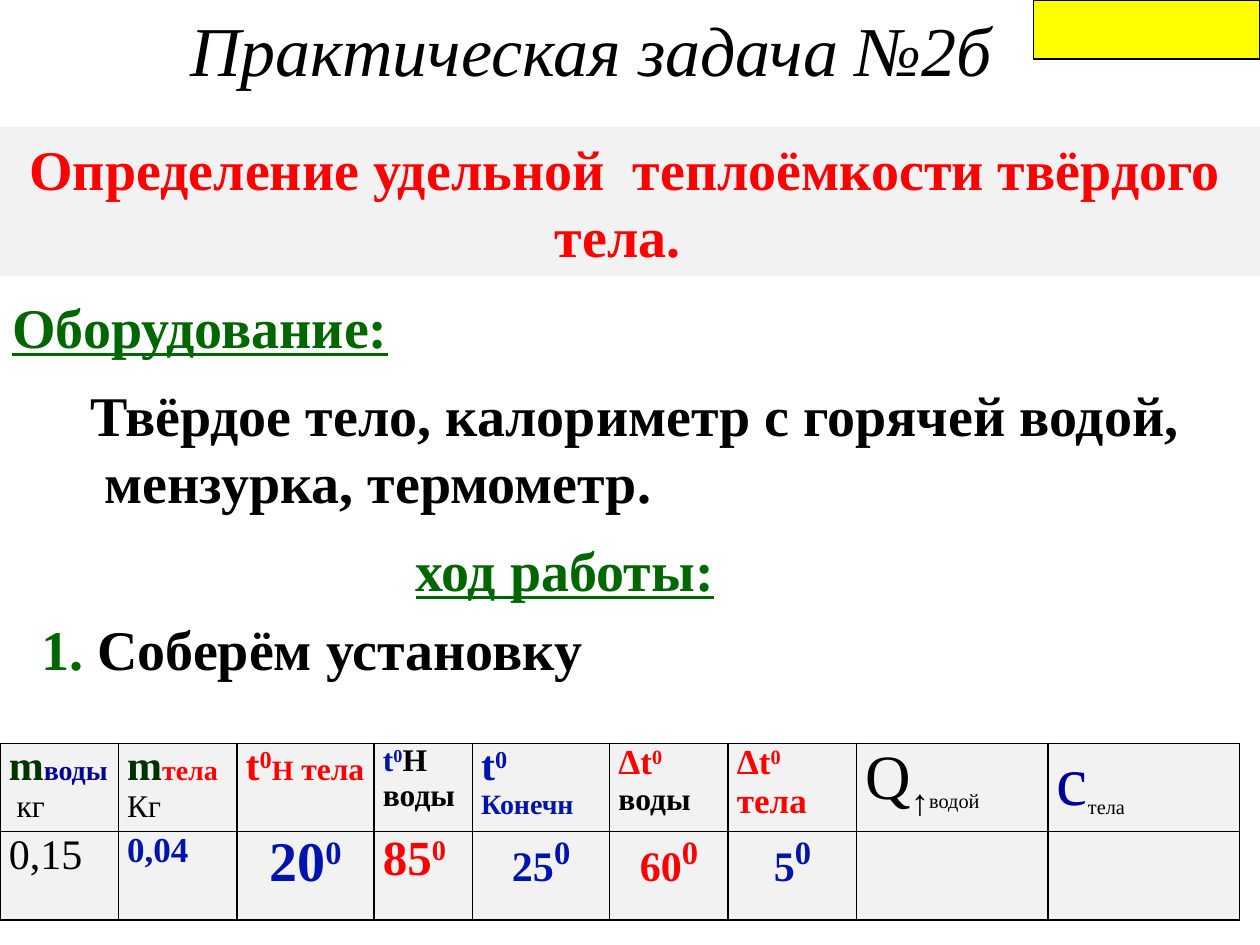
from lxml import etree
from pptx import Presentation
from pptx.dml.color import RGBColor
from pptx.enum.shapes import MSO_SHAPE
from pptx.enum.text import MSO_ANCHOR, MSO_AUTO_SIZE, PP_ALIGN
from pptx.oxml.ns import qn
from pptx.util import Inches, Pt

LEFT, CENTER = PP_ALIGN.LEFT, PP_ALIGN.CENTER
TOP = MSO_ANCHOR.TOP
RECTANGLE = MSO_SHAPE.RECTANGLE
NO_AUTOFIT = MSO_AUTO_SIZE.NONE
TITLE_ONLY = 5

FONT = "Times New Roman"
BLACK, RED, BLUE, NAVY = "000000", "FF0000", "0014AC", "000099"
GREEN, DARK_GREEN = "006600", "003300"
GREY, YELLOW = "F2F2F2", "FFFF00"

COLUMN_WIDTHS = [0.94, 0.94, 1.09, 0.78, 1.09, 0.94, 1.02, 1.52, 1.52]
ROW_HEIGHT = 0.7


def rgb(color):
    return RGBColor.from_string(color)


def run(text, size, color=BLACK, bold=True, baseline=0, **more):
    """Describe one run: its text, colour, baseline and font formats."""
    return text, color, baseline, dict(name=FONT, size=Pt(size), bold=bold, **more)


def degrees(value, size, color, degree_size):
    """Describe a number with a raised zero as the degree sign."""
    return [run(value, size, color), run("0", degree_size, color, baseline=30)]


def write(text_frame, paragraphs, align=LEFT):
    """Fill a text frame from a list of paragraphs, each a list of runs."""
    for index, runs in enumerate(paragraphs):
        paragraph = text_frame.add_paragraph() if index else text_frame.paragraphs[0]
        paragraph.alignment = align
        for text, color, baseline, formats in runs:
            piece = paragraph.add_run()
            piece.text = text
            for name, value in formats.items():
                setattr(piece.font, name, value)
            piece.font.color.rgb = rgb(color)
            if baseline:
                piece.font._element.set("baseline", str(baseline * 1000))


def add_title(slide, left, top, width, height, runs):
    title = slide.shapes.title
    box = dict(left=left, top=top, width=width, height=height)
    for name, value in box.items():
        setattr(title, name, Inches(value))
    formats = dict(word_wrap=False, auto_size=NO_AUTOFIT, vertical_anchor=TOP)
    for name, value in formats.items():
        setattr(title.text_frame, name, value)
    write(title.text_frame, [runs])


def add_text(slide, left, top, width, height, paragraphs):
    box = slide.shapes.add_textbox(*map(Inches, (left, top, width, height)))
    box.text_frame.word_wrap = False
    write(box.text_frame, paragraphs)


def add_rectangle(slide, left, top, width, height, fill, line=None):
    shape = slide.shapes.add_shape(RECTANGLE, *map(Inches, (left, top, width, height)))
    shape.shadow.inherit = False
    shape.fill.solid()
    shape.fill.fore_color.rgb = rgb(fill)
    if line:
        shape.line.color.rgb = rgb(line)
        shape.line.width = Pt(0.75)
    else:
        shape.line.fill.background()
    return shape


def set_borders(cell, color=BLACK, width=1):
    properties = cell._tc.get_or_add_tcPr()
    for index, side in enumerate(("a:lnL", "a:lnR", "a:lnT", "a:lnB")):
        line = etree.Element(qn(side), w=str(Pt(width)))
        fill = etree.SubElement(line, qn("a:solidFill"))
        etree.SubElement(fill, qn("a:srgbClr"), val=color)
        properties.insert(index, line)


def add_table(slide, left, top, rows):
    size = sum(COLUMN_WIDTHS), ROW_HEIGHT * len(rows)
    frame = slide.shapes.add_table(len(rows), len(COLUMN_WIDTHS),
                                   *map(Inches, (left, top, *size)))
    table = frame.table
    table.first_row = table.horz_banding = False
    for column, width in zip(table.columns, COLUMN_WIDTHS):
        column.width = Inches(width)
    for row_index, row in enumerate(rows):
        table.rows[row_index].height = Inches(ROW_HEIGHT)
        for column_index, (paragraphs, align) in enumerate(row):
            cell = table.cell(row_index, column_index)
            formats = dict(margin_left=Inches(0.07), margin_right=Inches(0.07),
                           margin_top=0, margin_bottom=0)
            for name, value in formats.items():
                setattr(cell, name, value)
            cell.fill.solid()
            cell.fill.fore_color.rgb = rgb(GREY)
            set_borders(cell)
            write(cell.text_frame, paragraphs, align)


def measurement_rows():
    """Return the quantities and their measured values."""
    quantities = [
        [[run("m", 24, DARK_GREEN), run("воды", 16, NAVY)],
         [run(" кг", 18, bold=False)]],
        [[run("m", 24, DARK_GREEN), run("тела", 16, RED)],
         [run("Кг", 18, bold=False)]],
        [degrees("t", 24, RED, 24) + [run("Н", 16, RED), run(" тела", 18, RED)]],
        [degrees("t", 18, BLUE, 18) + [run("Н", 18)], [run("воды", 18)]],
        [degrees("t", 24, BLUE, 24) + [run(" Конечн", 16, BLUE)]],
        [degrees("Δt", 20, RED, 20) + [run(" воды", 18)]],
        [degrees("Δt", 20, RED, 20) + [run(" тела", 20, RED)]],
        [[run("Q", 36, bold=False), run("↑", 36, bold=False, baseline=-25),
          run("водой", 20, bold=False, baseline=-25)]],
        [[run("с", 40, NAVY, bold=False),
          run("тела", 20, bold=False, baseline=-25)]],
    ]
    values = [
        ([[run("0,15", 24, bold=False)]], LEFT),
        ([[run("0,04", 20, BLUE)]], LEFT),
        ([degrees("20", 32, BLUE, 32)], CENTER),
        ([degrees("85", 28, RED, 28)], LEFT),
        ([degrees("25", 24, BLUE, 32)], CENTER),
        ([degrees("60", 24, RED, 32)], CENTER),
        ([degrees("5", 24, BLUE, 32)], CENTER),
        ([], LEFT),
        ([], LEFT),
    ]
    return [[(quantity, LEFT) for quantity in quantities], values]


def main():
    presentation = Presentation()
    presentation.slide_width, presentation.slide_height = Inches(10), Inches(7.5)
    slide = presentation.slides.add_slide(presentation.slide_layouts[TITLE_ONLY])

    # Title and topic
    add_title(slide, 1.41, 0, 6.64, 0.77,
              [run("Практическая задача №2б", 40, bold=False, italic=True)])
    topic = add_rectangle(slide, -0.08, 1.01, 10.08, 1.18, GREY)
    topic.text_frame.word_wrap = True
    write(topic.text_frame,
          [[run("Определение удельной  теплоёмкости твёрдого тела. ", 32, RED)]], CENTER)

    # Equipment
    add_text(slide, 0, 2.27, 3.21, 0.64,
             [[run("Оборудование:", 32, GREEN, underline=True)]])
    add_text(slide, 0.62, 2.97, 8.93, 1.18,
             [[run("Твёрдое тело, калориметр с горячей водой,", 32)],
              [run(" мензурка, термометр.", 32)]])

    # Procedure
    add_text(slide, 3.2, 4.2, 2.59, 0.64,
             [[run("ход работы:", 32, GREEN, underline=True)]])
    add_text(slide, 0.23, 4.83, 4.54, 0.64,
             [[run("1. ", 32, GREEN), run("Соберём установку", 32)]])

    # Corner marker and measurements
    add_rectangle(slide, 8.2, 0, 1.8, 0.47, YELLOW, BLACK)
    add_table(slide, 0, 5.9, measurement_rows())

    presentation.save("out.pptx")


if __name__ == "__main__":
    main()
